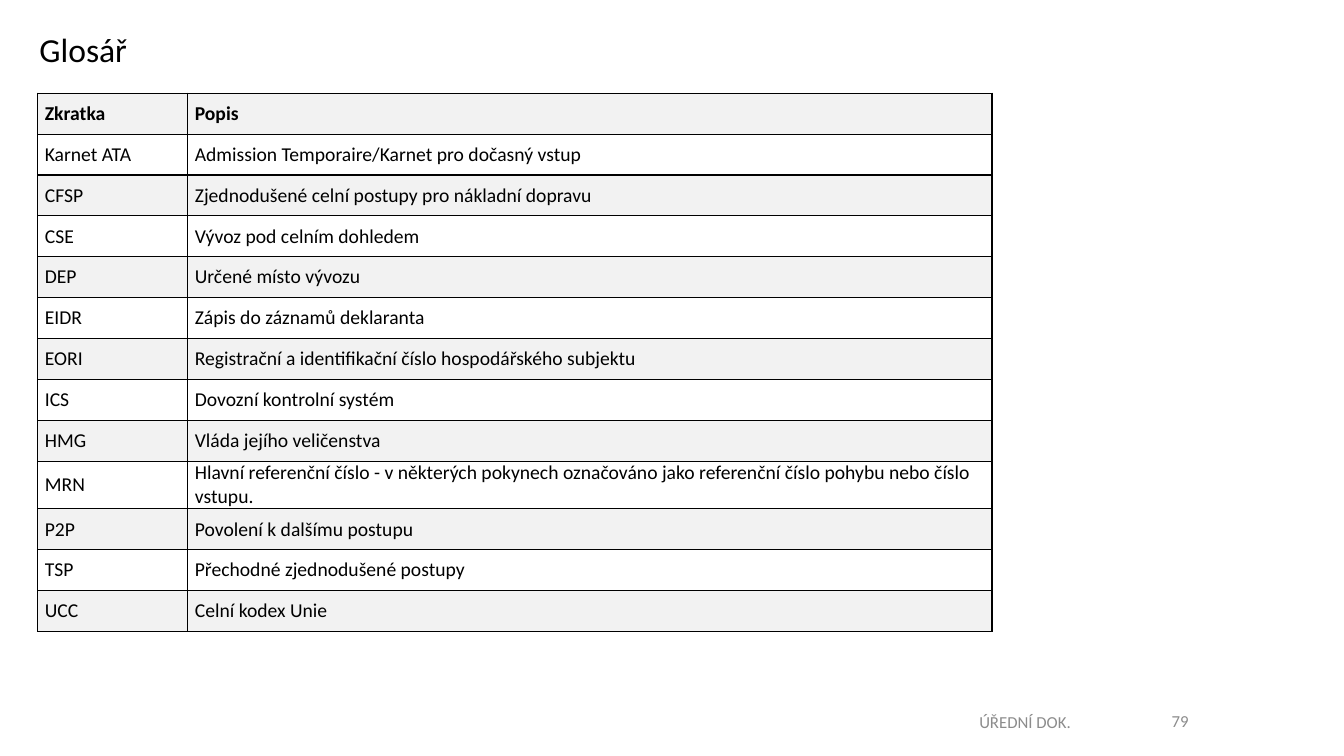
from dataclasses import dataclass

from lxml import etree
from pptx import Presentation
from pptx import util as u
from pptx.dml.color import RGBColor
from pptx.enum import text
from pptx.oxml.ns import qn


@dataclass(frozen=True)
class Theme:
    font: str = "Calibri"
    ink: str = "000000"
    muted: str = "8C8C8C"
    band: str = "F2F2F2"
    plain: str = "FFFFFF"
    title_size: int = 24
    table_size: int = 14
    footer_size: int = 12


THEME = Theme()


def format_text(paragraph, size, color, bold=False, align=text.PP_ALIGN.LEFT):
    paragraph.alignment = align
    for run in paragraph.runs:
        run.font.name = THEME.font
        run.font.size = u.Pt(size)
        run.font.bold = bold
        run.font.color.rgb = RGBColor.from_string(color)


def add_borders(cell):
    """Draw a 1 pt line on every side; call before setting the fill."""
    properties = cell._tc.get_or_add_tcPr()
    for side in ("a:lnL", "a:lnR", "a:lnT", "a:lnB"):
        line = etree.SubElement(properties, qn(side), w=str(u.Pt(1)))
        fill = etree.SubElement(line, qn("a:solidFill"))
        etree.SubElement(fill, qn("a:srgbClr"), val=THEME.ink)


presentation = Presentation()
presentation.slide_width = u.Cm(33.87)
presentation.slide_height = u.Cm(19.05)
slide = presentation.slides.add_slide(presentation.slide_layouts[5])

# Title
title = slide.shapes.title
title.left, title.top = u.Cm(0.74), u.Cm(0.25)
title.width, title.height = u.Cm(13.18), u.Cm(2.11)
title.text_frame.text = "Glosář"
title.text_frame.vertical_anchor = text.MSO_ANCHOR.MIDDLE
heading = title.text_frame.paragraphs[0]
heading.line_spacing = 0.9
format_text(heading, THEME.title_size, THEME.ink)

# Glossary
entries = [
    ("Zkratka", "Popis"),
    ("Karnet ATA", "Admission Temporaire/Karnet pro dočasný vstup"),
    ("CFSP", "Zjednodušené celní postupy pro nákladní dopravu"),
    ("CSE", "Vývoz pod celním dohledem"),
    ("DEP", "Určené místo vývozu"),
    ("EIDR", "Zápis do záznamů deklaranta"),
    ("EORI", "Registrační a identifikační číslo hospodářského subjektu"),
    ("ICS", "Dovozní kontrolní systém"),
    ("HMG", "Vláda jejího veličenstva"),
    ("MRN", "Hlavní referenční číslo - v některých pokynech označováno "
            "jako referenční číslo pohybu nebo číslo vstupu."),
    ("P2P", "Povolení k dalšímu postupu"),
    ("TSP", "Přechodné zjednodušené postupy"),
    ("UCC", "Celní kodex Unie"),
]
column_widths = [u.Cm(3.78), u.Cm(20.27)]
row_height = u.Cm(1.03)
glossary = slide.shapes.add_table(
    len(entries), len(column_widths), u.Cm(0.95), u.Cm(2.35),
    sum(column_widths), row_height * len(entries)).table
glossary.horz_banding = False
for column, width in zip(glossary.columns, column_widths):
    column.width = width

for row, entry in enumerate(entries):
    for column, wording in enumerate(entry):
        cell = glossary.cell(row, column)
        add_borders(cell)
        cell.fill.solid()
        cell.fill.fore_color.rgb = RGBColor.from_string(
            THEME.plain if row % 2 else THEME.band)
        cell.margin_left = cell.margin_right = u.Cm(0.18)
        cell.margin_top = cell.margin_bottom = 0
        cell.vertical_anchor = text.MSO_ANCHOR.MIDDLE
        cell.text_frame.text = wording
        paragraph = cell.text_frame.paragraphs[0]
        two_lines = len(wording) > 90
        paragraph.space_before = u.Pt(0 if two_lines else 6)
        paragraph.space_after = u.Pt(0 if two_lines else 3)
        format_text(paragraph, THEME.table_size, THEME.ink, bold=row == 0)

# Footer: marking and page number
footers = [
    ("ÚŘEDNÍ DOK.", 20.12, 17.68, 11.43),
    ("79", 25.93, 17.65, 7.62),
]
for wording, left, top, width in footers:
    footer = slide.shapes.add_textbox(
        u.Cm(left), u.Cm(top), u.Cm(width), u.Cm(1.01)).text_frame
    footer.word_wrap = True
    footer.vertical_anchor = text.MSO_ANCHOR.MIDDLE
    footer.text = wording
    format_text(footer.paragraphs[0], THEME.footer_size, THEME.muted,
                align=text.PP_ALIGN.CENTER)

presentation.save("out.pptx")
